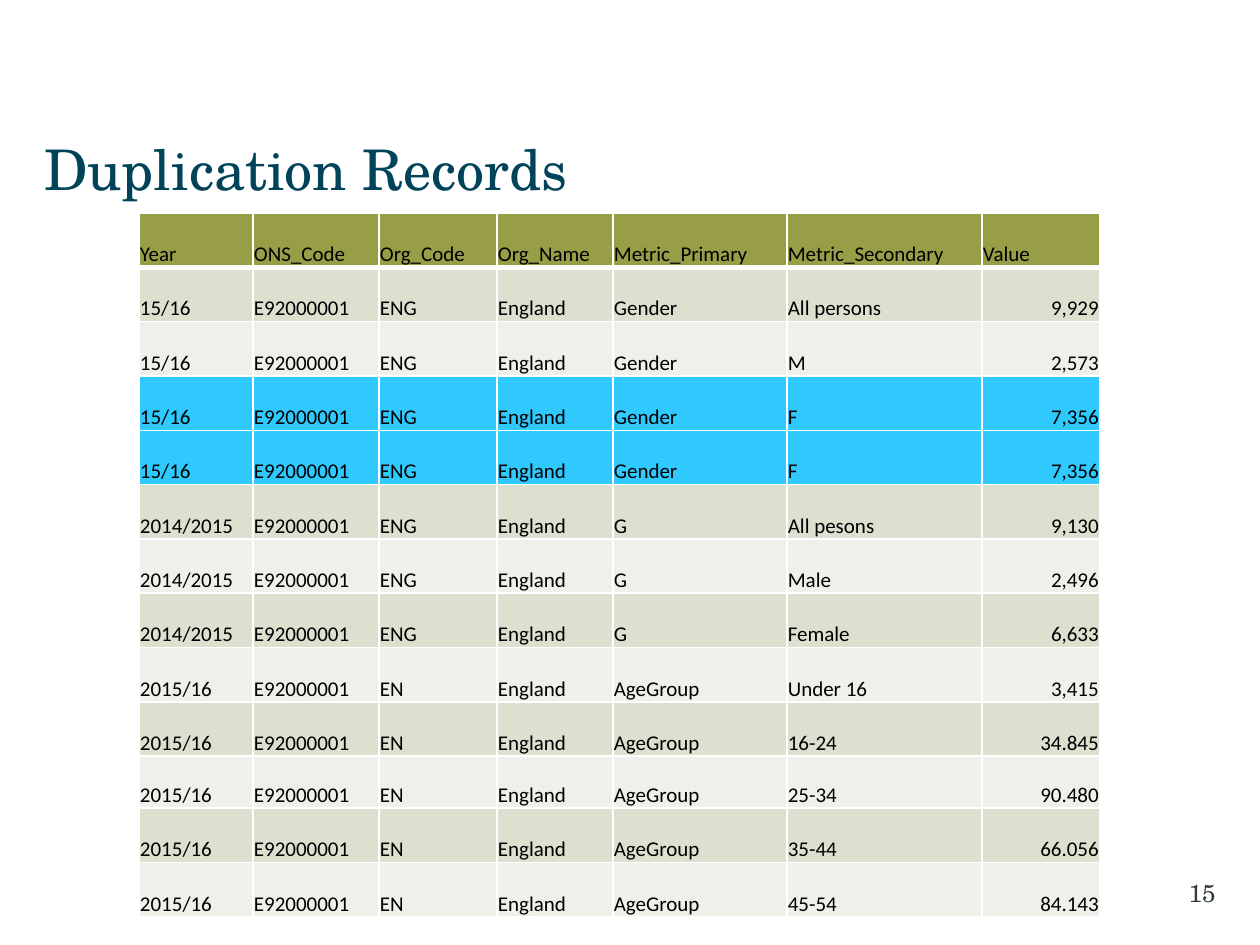
"""Build the Duplication Records slide: a title, a table and a page number."""
import lxml.etree
import pptx
import pptx.dml.color
import pptx.enum.text
import pptx.oxml.ns
import pptx.util

SCALE = 914400 // 126
ALIGN = pptx.enum.text.PP_ALIGN
ANCHOR = pptx.enum.text.MSO_ANCHOR
SERIF = "TeX Gyre Schola"


def color(code):
    return pptx.dml.color.RGBColor.from_string(code)


def write(para, text, size, face, code, align=ALIGN.LEFT):
    para.alignment = align
    run = para.add_run()
    run.text = text
    run.font.size = pptx.util.Pt(size)
    run.font.name = face
    run.font.bold = False
    run.font.color.rgb = color(code)


deck = pptx.Presentation()
deck.slide_width = pptx.util.Inches(10)
deck.slide_height = pptx.util.Inches(7.5)
slide = deck.slides.add_slide(deck.slide_layouts[6])

head = ["Year", "ONS_Code", "Org_Code", "Org_Name",
        "Metric_Primary", "Metric_Secondary", "Value"]
data = [
    ("15/16", "ENG", "Gender", "All persons", "9,929"),
    ("15/16", "ENG", "Gender", "M", "2,573"),
    ("15/16", "ENG", "Gender", "F", "7,356"),
    ("15/16", "ENG", "Gender", "F", "7,356"),
    ("2014/2015", "ENG", "G", "All pesons", "9,130"),
    ("2014/2015", "ENG", "G", "Male", "2,496"),
    ("2014/2015", "ENG", "G", "Female", "6,633"),
    ("2015/16", "EN", "AgeGroup", "Under 16", "3,415"),
    ("2015/16", "EN", "AgeGroup", "16-24", "34.845"),
    ("2015/16", "EN", "AgeGroup", "25-34", "90.480"),
    ("2015/16", "EN", "AgeGroup", "35-44", "66.056"),
    ("2015/16", "EN", "AgeGroup", "45-54", "84.143"),
]
rows = [head] + [[year, "E92000001", org, "England", first, second, value]
                 for year, org, first, second, value in data]
widths = [114, 126, 118, 116, 174, 195, 118]
total, short = 704, 52

frame = slide.shapes.add_table(
    len(rows), len(head), 139 * SCALE, 213 * SCALE,
    sum(widths) * SCALE, total * SCALE)
table = frame.table
for column, width in zip(table.columns, widths):
    column.width = width * SCALE

for i, row in enumerate(rows):
    tall = (total - short) * SCALE // (len(rows) - 1)
    table.rows[i].height = short * SCALE if i == 10 else tall
    if i == 0:
        fill = "979E45"
    elif i in (3, 4):
        fill = "2FC9FD"
    else:
        fill = "DDDFCF" if i % 2 else "EFF0E9"
    for j, text in enumerate(row):
        cell = table.cell(i, j)
        cell.margin_left = cell.margin_right = cell.margin_top = SCALE
        cell.margin_bottom = 0
        cell.vertical_anchor = ANCHOR.BOTTOM
        props = cell._tc.get_or_add_tcPr()
        for side in "LRB" if i == 1 else "LRTB":
            points = 3 if i == 0 and side == "B" else 1
            line = lxml.etree.SubElement(
                props, pptx.oxml.ns.qn("a:ln" + side),
                w=str(pptx.util.Pt(points)))
            solid = lxml.etree.SubElement(line, pptx.oxml.ns.qn("a:solidFill"))
            lxml.etree.SubElement(
                solid, pptx.oxml.ns.qn("a:srgbClr"), val="FFFFFF")
        cell.fill.solid()
        cell.fill.fore_color.rgb = color(fill)
        align = ALIGN.RIGHT if i and j == len(head) - 1 else ALIGN.LEFT
        write(cell.text_frame.paragraphs[0], text, 12, "Calibri", "000000", align)

labels = [
    ("Duplication Records", (44, 123, 1171, 90), 32, "014359", ALIGN.LEFT, 0, 13),
    ("15", (974, 871, 242, 43), 14, "323D43", ALIGN.RIGHT, 13, 0),
]
for text, place, size, code, align, left, right in labels:
    box = slide.shapes.add_textbox(*[n * SCALE for n in place]).text_frame
    box.word_wrap = True
    box.vertical_anchor = ANCHOR.MIDDLE
    box.margin_left, box.margin_right = left * SCALE, right * SCALE
    write(box.paragraphs[0], text, size, SERIF, code, align)

deck.save("out.pptx")
